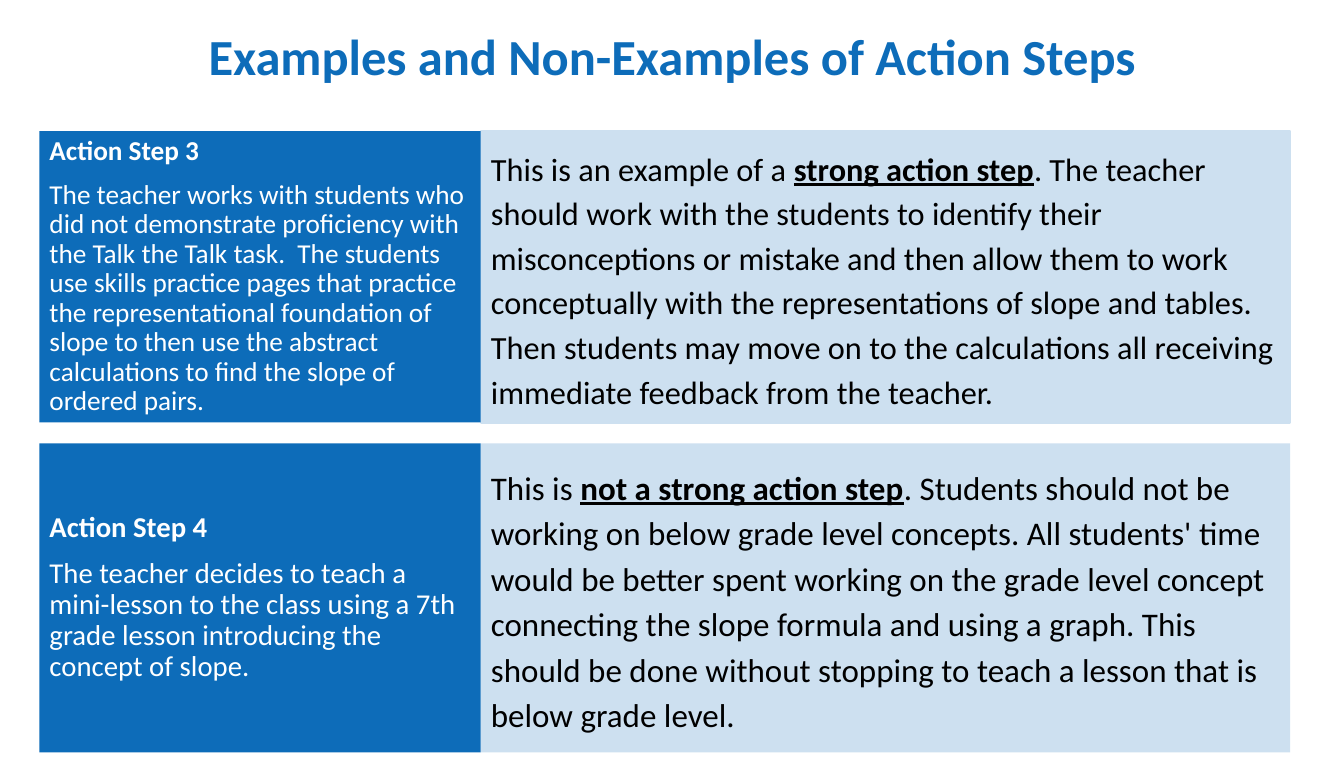
"""Builds a slide that judges two action steps as strong or not strong."""
from pptx import Presentation
from pptx.dml.color import RGBColor
from pptx.enum.shapes import MSO_SHAPE
from pptx.enum.text import MSO_ANCHOR, PP_ALIGN
from pptx.util import Pt

RECT = MSO_SHAPE.RECTANGLE
MIDDLE = MSO_ANCHOR.MIDDLE
LEFT, CENTER = PP_ALIGN.LEFT, PP_ALIGN.CENTER
BLUE, PALE, WHITE, BLACK = "0D6CB9", "CDE0F0", "FFFFFF", "000000"
STEP_X, STEP_W = 27.4, 307.4
REVIEW_X, REVIEW_W = STEP_X + STEP_W, 563.8


def rgb(value):
    return RGBColor.from_string(value)


def write(sp, paragraphs, size, color, spacing, align=LEFT):
    tf = sp.text_frame
    tf.word_wrap = True
    tf.vertical_anchor = MIDDLE
    for i, runs in enumerate(paragraphs):
        p = tf.add_paragraph() if i else tf.paragraphs[0]
        p.alignment = align
        p.line_spacing = spacing
        p.space_before = Pt(10 if i else 0)
        p.font.name = "Calibri"
        p.font.size = Pt(size)
        p.font.color.rgb = rgb(color)
        for text, bold, underline in runs:
            r = p.add_run()
            r.text = text
            r.font.bold = bold
            r.font.underline = underline


prs = Presentation()
prs.slide_width, prs.slide_height = Pt(936), Pt(540)
s = prs.slides.add_slide(prs.slide_layouts[6])

title = s.shapes.add_textbox(Pt(137.5), Pt(3.6), Pt(661), Pt(75.6))
write(title, [[("Examples and Non-Examples of Action Steps", True, False)]],
      35.2, BLUE, 0.9, CENTER)

rows = [
    (91.4, 203, PALE, "Action Step 3", 19,
     "The teacher works with students who did not demonstrate proficiency with "
     "the Talk the Talk task.  The students use skills practice pages that "
     "practice the representational foundation of slope to then use the abstract "
     "calculations to find the slope of ordered pairs.",
     22.5, "This is an example of a ", "strong action step",
     ". The teacher should work with the students to identify their "
     "misconceptions or mistake and then allow them to work conceptually with "
     "the representations of slope and tables. Then students may move on to the "
     "calculations all receiving immediate feedback from the teacher."),
    (308.9, 215.3, None, "Action Step 4", 20,
     "The teacher decides to teach a mini-lesson to the class using a 7th grade "
     "lesson introducing the concept of slope.",
     23, "This is ", "not a strong action step",
     ". Students should not be working on below grade level concepts. All "
     "students' time would be better spent working on the grade level concept "
     "connecting the slope formula and using a graph. This should be done without "
     "stopping to teach a lesson that is below grade level."),
]

for (top, height, outline, heading, step_size, step,
     review_size, intro, verdict, reason) in rows:
    review_text = [[(intro, False, False), (verdict, True, True),
                    (reason, False, False)]]
    step_text = [[(heading, True, False)], [(step, False, False)]]
    for x, width, fill, line, text, size, color, spacing in (
            (REVIEW_X, REVIEW_W, PALE, outline, review_text, review_size, BLACK, 1.15),
            (STEP_X, STEP_W, BLUE, None, step_text, step_size, WHITE, 0.9)):
        sp = s.shapes.add_shape(RECT, Pt(x), Pt(top), Pt(width), Pt(height))
        sp.shadow.inherit = False
        sp.fill.solid()
        sp.fill.fore_color.rgb = rgb(fill)
        if line:
            sp.line.color.rgb = rgb(line)
            sp.line.width = Pt(1.5)
        else:
            sp.line.fill.background()
        write(sp, text, size, color, spacing)

prs.save("out.pptx")
